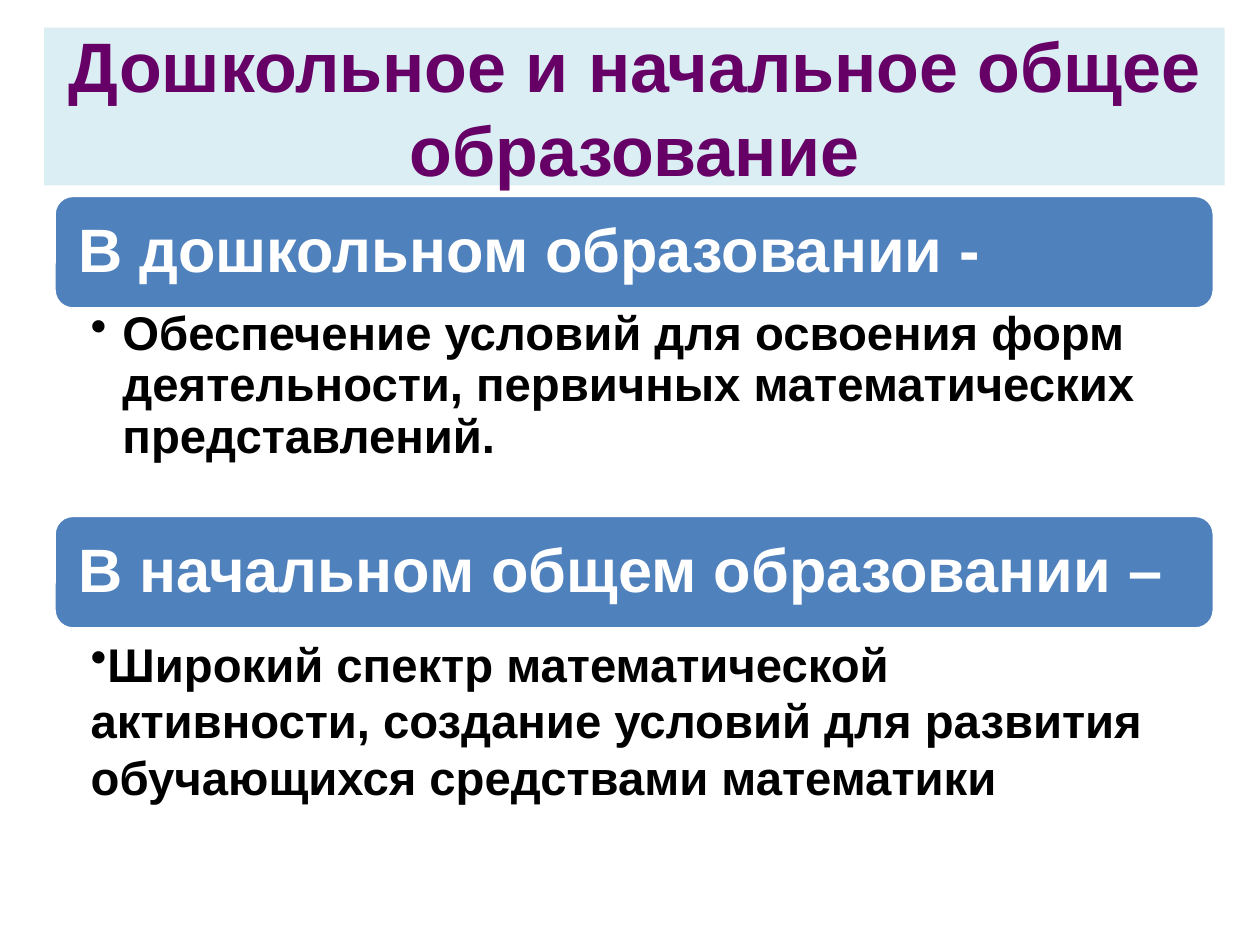
from dataclasses import dataclass

from lxml import etree
from pptx import Presentation
from pptx.dml.color import RGBColor
from pptx.enum.shapes import MSO_SHAPE
from pptx.enum.text import MSO_ANCHOR, PP_ALIGN
from pptx.oxml.ns import qn
from pptx.util import Cm, Pt

RECT = MSO_SHAPE.RECTANGLE
ROUND = MSO_SHAPE.ROUNDED_RECTANGLE
TOP = MSO_ANCHOR.TOP
MIDDLE = MSO_ANCHOR.MIDDLE
LEFT = PP_ALIGN.LEFT
CENTER = PP_ALIGN.CENTER


@dataclass(frozen=True)
class Theme:
    font: str = "Arial"
    band: RGBColor = RGBColor(0xDB, 0xEE, 0xF4)
    title: RGBColor = RGBColor(0x66, 0x00, 0x66)
    bar: RGBColor = RGBColor(0x4F, 0x81, 0xBD)
    white: RGBColor = RGBColor(0xFF, 0xFF, 0xFF)
    black: RGBColor = RGBColor(0x00, 0x00, 0x00)
    title_size: Pt = Pt(40)
    bar_size: Pt = Pt(35)
    body_size: Pt = Pt(27)


THEME = Theme()
EDGE = Cm(1.09)
WIDTH = Cm(23.39)
BAR_HEIGHT = Cm(2.29)


def set_frame(shape, anchor, left, top, right):
    frame = shape.text_frame
    frame.word_wrap = True
    frame.vertical_anchor = anchor
    frame.margin_left, frame.margin_right = left, right
    frame.margin_top = frame.margin_bottom = top
    return frame.paragraphs[0]


def add_run(para, text, size, color):
    run = para.add_run()
    run.text = text
    run.font.name = THEME.font
    run.font.size = size
    run.font.bold = True
    run.font.color.rgb = color


def add_block(slide, kind, box, fill):
    shape = slide.shapes.add_shape(kind, *box)
    shape.shadow.inherit = False
    shape.fill.solid()
    shape.fill.fore_color.rgb = fill
    return shape


def add_title(slide, text):
    box = Cm(0.89), Cm(0.56), Cm(23.8), Cm(3.18)
    shape = add_block(slide, RECT, box, THEME.band)
    shape.line.fill.background()
    para = set_frame(shape, MIDDLE, Cm(0.25), Cm(0.13), Cm(0.25))
    para.alignment = CENTER
    add_run(para, text, THEME.title_size, THEME.title)


def add_bar(slide, top, text):
    shape = add_block(slide, ROUND, (EDGE, top, WIDTH, BAR_HEIGHT), THEME.bar)
    shape.line.color.rgb = THEME.white
    shape.line.width = Pt(2)
    para = set_frame(shape, MIDDLE, Cm(0.38), Cm(0.38), Cm(0.38))
    para.alignment = LEFT
    para.line_spacing = 0.9
    add_run(para, text, THEME.bar_size, THEME.white)


def add_bullet(slide, top, height, text, indent, spacing):
    box = slide.shapes.add_textbox(EDGE, top, WIDTH, height)
    para = set_frame(box, TOP, Cm(0.74), Cm(0.13), Cm(0.69))
    props = para._p.get_or_add_pPr()
    props.set("marL", str(indent))
    props.set("indent", str(-indent))
    etree.SubElement(props, qn("a:buChar")).set("char", "•")
    para.line_spacing = spacing
    add_run(para, text, THEME.body_size, THEME.black)


def main():
    deck = Presentation()
    deck.slide_width, deck.slide_height = Cm(25.4), Cm(19.05)
    slide = deck.slides.add_slide(deck.slide_layouts[6])

    add_title(slide, "Дошкольное и начальное общее образование")
    add_bar(slide, Cm(3.94), "В дошкольном образовании -")
    add_bullet(
        slide, Cm(6.12), Cm(3.23),
        "Обеспечение условий для освоения форм деятельности, "
        "первичных математических представлений.",
        Cm(0.64), 0.9,
    )
    add_bar(slide, Cm(10.39), "В начальном общем образовании –")
    add_bullet(
        slide, Cm(12.67), Cm(4.62),
        "Широкий спектр математической\t активности, создание условий "
        "для развития обучающихся средствами математики",
        Cm(0), 1.0,
    )
    deck.save("out.pptx")


if __name__ == "__main__":
    main()
